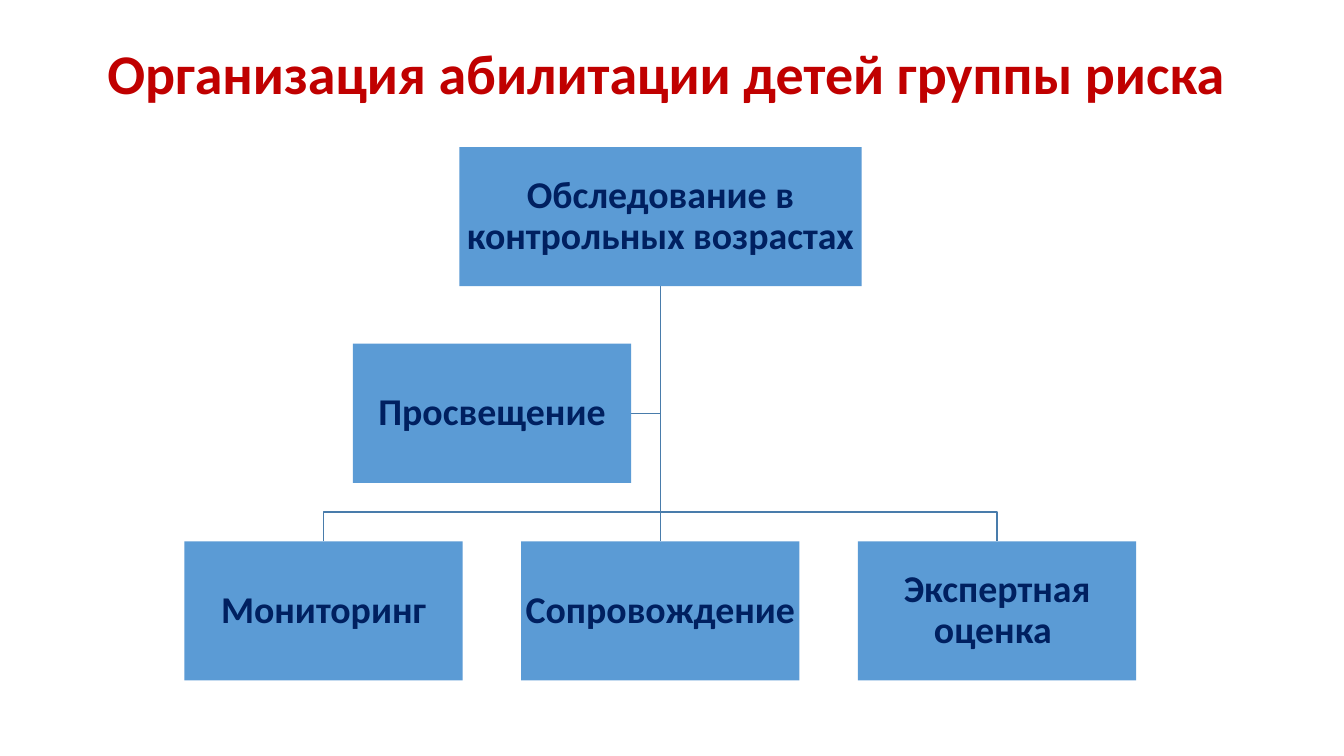
from pptx import Presentation
from pptx.dml.color import RGBColor
from pptx.enum.shapes import MSO_CONNECTOR, MSO_SHAPE
from pptx.enum.text import MSO_ANCHOR, PP_ALIGN
from pptx.oxml.ns import qn
from pptx.util import Inches, Pt
from lxml import etree

TITLE = "Организация абилитации детей группы риска"
ROOT = "Обследование в контрольных возрастах"
ASSISTANT = "Просвещение"
CHILDREN = ["Мониторинг", "Сопровождение", "Экспертная оценка "]

RED = RGBColor(0xC0, 0x00, 0x00)
NAVY = RGBColor(0x00, 0x20, 0x60)
BLUE = RGBColor(0x5B, 0x9B, 0xD5)
LINE = RGBColor(0x49, 0x7C, 0xAB)
FONT = "Calibri"
RECT = MSO_SHAPE.RECTANGLE
STRAIGHT = MSO_CONNECTOR.STRAIGHT
CENTER = PP_ALIGN.CENTER
MIDDLE = MSO_ANCHOR.MIDDLE

AXIS = 6.55
ROOT_W, BOX_W, BOX_H = 3.99, 2.76, 1.38
GAP = 0.58
ROOT_Y, ASSISTANT_Y, CHILD_Y = 1.46, 3.41, 5.37
ASSISTANT_RIGHT = AXIS - GAP / 2
ROOT_BOTTOM = ROOT_Y + BOX_H
BUS_Y = CHILD_Y - GAP / 2


def set_text(sp, text, size, color, margin):
    tf = sp.text_frame
    tf.word_wrap = True
    tf.vertical_anchor = MIDDLE
    tf.margin_left = tf.margin_right = Inches(margin)
    tf.margin_top = tf.margin_bottom = Inches(min(margin, 0.05))
    p = tf.paragraphs[0]
    p.alignment = CENTER
    p.line_spacing = 0.9
    r = p.add_run()
    r.text = text
    r.font.name = FONT
    r.font.size = Pt(size)
    r.font.bold = True
    r.font.color.rgb = color


def add_box(slide, text, x, y, w):
    sp = slide.shapes.add_shape(RECT, Inches(x), Inches(y), Inches(w), Inches(BOX_H))
    sp.shadow.inherit = False
    sp.fill.solid()
    sp.fill.fore_color.rgb = BLUE
    sp.line.fill.background()
    set_text(sp, text, size=27, color=NAVY, margin=0.02)


def style_line(sp):
    sp.line.color.rgb = LINE
    sp.line.width = Pt(1)


def add_bent_line(slide, points):
    start, *rest = [(Inches(x), Inches(y)) for x, y in points]
    builder = slide.shapes.build_freeform(*start)
    builder.add_line_segments(rest, close=False)
    sp = builder.convert_to_shape()
    sp.shadow.inherit = False
    sp.fill.background()
    style_line(sp)


def add_trunk(slide):
    x = Inches(AXIS)
    line = slide.shapes.add_connector(STRAIGHT, x, Inches(ROOT_BOTTOM), x, Inches(CHILD_Y))
    etree.SubElement(line._element.spPr, qn("a:effectLst"))
    style_line(line)


def main():
    prs = Presentation()
    prs.slide_width, prs.slide_height = Inches(13.33), Inches(7.5)
    slide = prs.slides.add_slide(prs.slide_layouts[5])

    title = slide.shapes.title
    title.left, title.top = Inches(0.92), Inches(0.32)
    title.width, title.height = Inches(11.5), Inches(0.88)
    set_text(title, TITLE, size=40, color=RED, margin=0.1)
    title.text_frame.margin_right = Inches(0.23)

    assistant_mid = ASSISTANT_Y + BOX_H / 2
    add_bent_line(slide, [(AXIS, ROOT_BOTTOM), (AXIS, assistant_mid),
                          (ASSISTANT_RIGHT, assistant_mid)])
    pitch = BOX_W + GAP
    for x in (AXIS + pitch, AXIS - pitch):
        add_bent_line(slide, [(AXIS, ROOT_BOTTOM), (AXIS, BUS_Y), (x, BUS_Y), (x, CHILD_Y)])
    add_trunk(slide)

    add_box(slide, ROOT, AXIS - ROOT_W / 2, ROOT_Y, ROOT_W)
    for i, text in enumerate(CHILDREN):
        add_box(slide, text, AXIS + (i - 1) * pitch - BOX_W / 2, CHILD_Y, BOX_W)
    add_box(slide, ASSISTANT, ASSISTANT_RIGHT - BOX_W, ASSISTANT_Y, BOX_W)

    prs.save("out.pptx")


if __name__ == "__main__":
    main()
